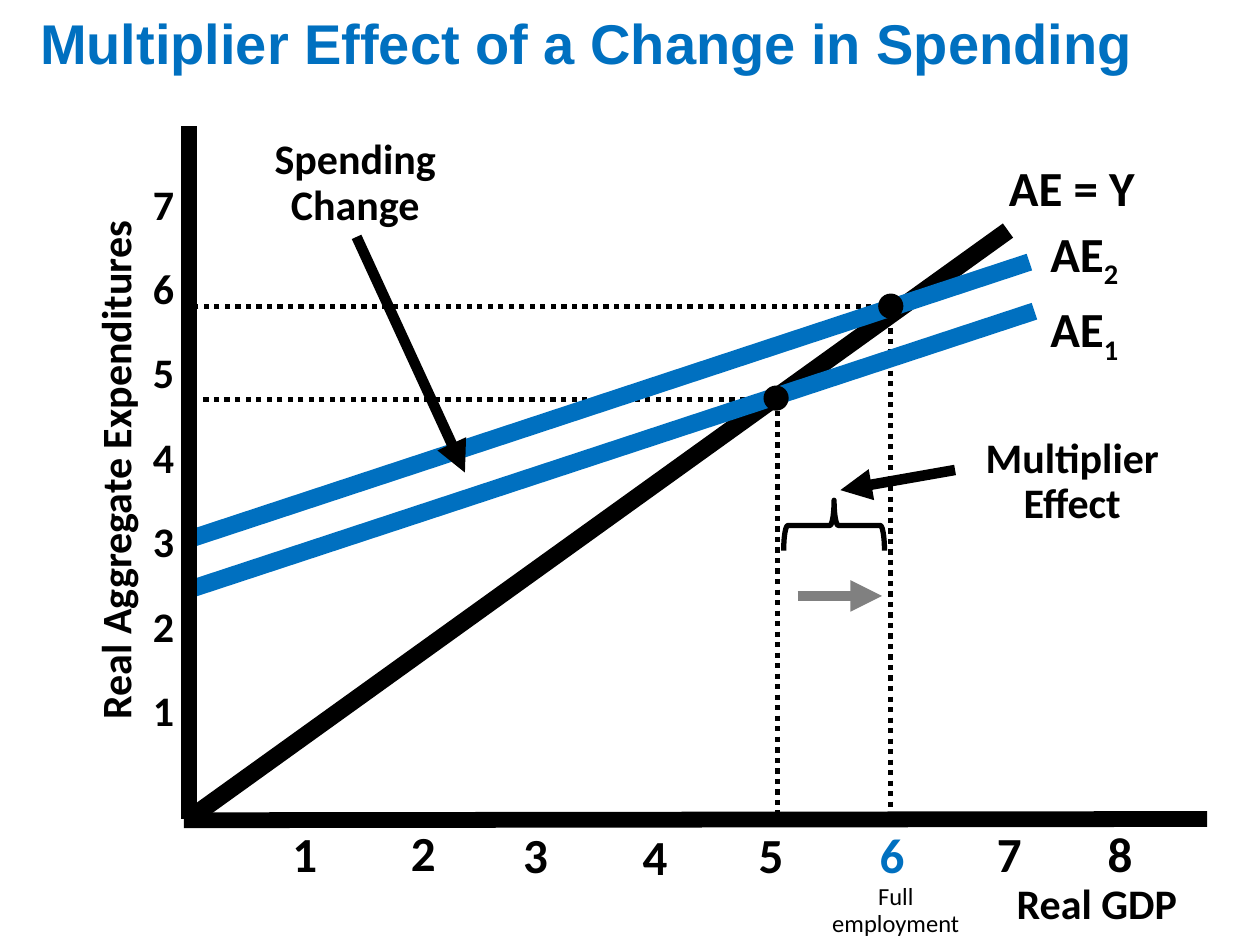
import pptx
import pptx.util
import pptx.dml.color
import pptx.enum.dml
import pptx.enum.shapes
import pptx.enum.text
import pptx.oxml.ns
from lxml import etree

Inches = pptx.util.Inches
SHAPES = pptx.enum.shapes.MSO_SHAPE
ALIGN = pptx.enum.text.PP_ALIGN

COLORS = {"black": "000000", "blue": "0070C0", "gray": "808080"}
X_TICK_CENTERS = [2.42, 3.36, 4.25, 5.2, 6.12, 7.08, 8.01, 8.89]
X_TICK_TOPS = [6.54, 6.53, 6.55, 6.56, 6.55, 6.55, 6.54, 6.54]


def color(name):
    return pptx.dml.color.RGBColor.from_string(COLORS[name])


def add_label(page, text, place, size=24, align=ALIGN.CENTER, subscript="",
              name="black", font="Calibri", bold=True, rotation=0):
    box = page.shapes.add_textbox(*map(Inches, place))
    box.rotation = rotation
    box.text_frame.word_wrap = True
    para = box.text_frame.paragraphs[0]
    para.alignment = align
    para.line_spacing = 0.9
    formats = {"size": pptx.util.Pt(size), "name": font, "bold": bold}
    for content in filter(None, (text, subscript)):
        span = para.add_run()
        span.text = content
        for key, value in formats.items():
            setattr(span.font, key, value)
        span.font.color.rgb = color(name)
        if content == subscript:
            span.font._element.set("baseline", "-25000")


def add_line(page, start, end, width, name="black", dotted=False, arrow=False):
    line = page.shapes.add_connector(
        pptx.enum.shapes.MSO_CONNECTOR.STRAIGHT,
        *map(Inches, (*start, *end)))
    line.line.width = pptx.util.Pt(width)
    line.line.color.rgb = color(name)
    if dotted:
        line.line.dash_style = pptx.enum.dml.MSO_LINE.ROUND_DOT
    qn = pptx.oxml.ns.qn
    if arrow:
        outline = line.line._get_or_add_ln()
        etree.SubElement(outline, qn("a:tailEnd"), type="triangle")
    etree.SubElement(line._element.spPr, qn("a:effectLst"))


def add_dot(page, center_x, center_y, size=0.2):
    dot = page.shapes.add_shape(
        SHAPES.OVAL, Inches(center_x - size / 2), Inches(center_y - size / 2),
        Inches(size), Inches(size))
    dot.shadow.inherit = False
    dot.fill.solid()
    dot.fill.fore_color.rgb = color("black")
    dot.line.fill.background()


def add_brace(page, place):
    brace = page.shapes.add_shape(SHAPES.RIGHT_BRACE, *map(Inches, place))
    brace.rotation = 270
    brace.shadow.inherit = False
    brace.fill.background()
    brace.line.color.rgb = color("black")
    brace.line.width = pptx.util.Pt(3)


def add_ticks(page):
    for number in range(1, 8):
        add_label(page, str(number), (0.75, 6.1 - 0.67 * number, 0.73, 0.46),
                  align=ALIGN.RIGHT)
    for number, (center, top) in enumerate(zip(X_TICK_CENTERS, X_TICK_TOPS), 1):
        add_label(page, str(number), (center - 0.4, top, 0.8, 0.53), 28,
                  name="blue" if number == 6 else "black")


def main():
    deck = pptx.Presentation()
    deck.slide_width, deck.slide_height = Inches(10), Inches(7.5)
    page = deck.slides.add_slide(deck.slide_layouts[6])

    # Title and tick numbers
    add_label(page, "Multiplier Effect of a Change in Spending",
              (0.22, 0.08, 9.08, 0.59), 32, ALIGN.LEFT, name="blue",
              font="Arial")
    add_ticks(page)

    # Dotted guides from each equilibrium to the axes
    for start, end in [((7, 2.43), (1.53, 2.43)), ((7.07, 2.44), (7.07, 6.52)),
                       ((6.08, 3.17), (1.58, 3.17)), ((6.17, 3.26), (6.17, 6.5))]:
        add_line(page, start, end, 3, dotted=True)

    # Expenditure lines, equilibrium points and axes
    add_line(page, (1.5, 6.5), (8, 1.83), 10)
    add_line(page, (1.5, 4.28), (8.17, 2.08), 10, "blue")
    add_dot(page, 7.07, 2.43)
    add_line(page, (1.53, 4.67), (8.21, 2.47), 10, "blue")
    add_line(page, (1.46, 6.51), (9.58, 6.5), 9)
    add_line(page, (1.5, 1), (1.5, 6.5), 9)
    add_dot(page, 6.16, 3.16)

    # Line names and axis titles
    add_label(page, "AE = Y ", (7.8, 1.25, 1.5, 0.52), 28)
    add_label(page, "AE", (8.17, 1.73, 0.92, 0.52), 28, subscript="2 ")
    add_label(page, "AE", (8.17, 2.33, 0.92, 0.52), 28, subscript="1 ")
    add_label(page, "Real Aggregate Expenditures", (-1.71, 3.5, 5.29, 0.46),
              rotation=270)
    add_label(page, "Real GDP", (7.83, 6.96, 1.75, 0.46))
    add_label(page, "Full employment", (6.38, 6.97, 1.46, 0.53), 14, bold=False)

    # Spending change and multiplier callouts
    add_label(page, "Spending Change", (1.73, 1.05, 2.18, 0.83))
    add_line(page, (2.83, 1.88), (3.69, 3.75), 6, arrow=True)
    add_label(page, "Multiplier Effect", (7.42, 3.42, 2.18, 0.83))
    add_line(page, (7.58, 3.73), (6.67, 3.89), 6, arrow=True)
    add_brace(page, (6.42, 3.77, 0.4, 0.8))
    add_line(page, (6.33, 4.73), (7, 4.73), 6, "gray", arrow=True)

    deck.save("out.pptx")


if __name__ == "__main__":
    main()
